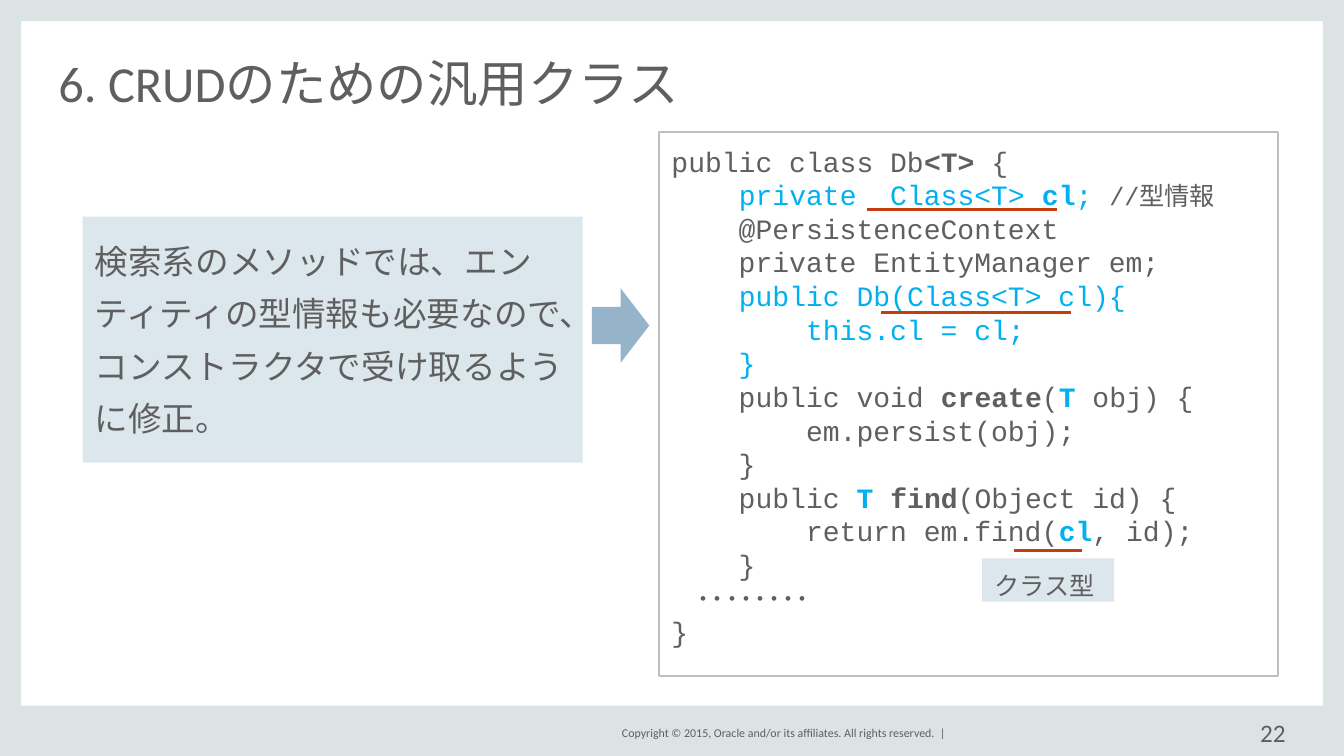
from lxml import etree
from pptx import Presentation
from pptx.dml.color import RGBColor
from pptx.enum.shapes import MSO_CONNECTOR, MSO_SHAPE
from pptx.enum.text import MSO_ANCHOR, PP_ALIGN
from pptx.oxml.ns import qn
from pptx.util import Inches, Pt

RECTANGLE, RIGHT_ARROW = MSO_SHAPE.RECTANGLE, MSO_SHAPE.RIGHT_ARROW
STRAIGHT = MSO_CONNECTOR.STRAIGHT
TOP, MIDDLE, BOTTOM = MSO_ANCHOR.TOP, MSO_ANCHOR.MIDDLE, MSO_ANCHOR.BOTTOM
LEFT, RIGHT = PP_ALIGN.LEFT, PP_ALIGN.RIGHT

THEME = {
    "text": "5F5F5F", "accent": "00B0F0", "frame": "DCE3E4", "panel": "DCE6ED",
    "arrow": "96B4C9", "border": "BFBFBF", "underline": "C23E0D",
    "body_font": "Calibri", "code_font": "Courier New",
    "title": 36, "message": 24, "code": 20, "small": 18, "footer": 8.5,
}

WIDTH, HEIGHT = 13.33, 7.5
SIDE, FOOTER_HEIGHT = 0.21, 0.5
FRAME = [
    (0, 0, SIDE, HEIGHT),
    (WIDTH - SIDE, 0, SIDE, HEIGHT),
    (0, HEIGHT - FOOTER_HEIGHT, WIDTH, FOOTER_HEIGHT),
    (0, 0, WIDTH, SIDE),
]
TITLE = "6. CRUDのための汎用クラス"
COPYRIGHT = "Copyright © 2015, Oracle and/or its affiliates. All rights reserved.  |"
PAGE_NUMBER = "22"
MESSAGE = "検索系のメソッドでは、エンティティの型情報も必要なので、コンストラクタで受け取るように修正。"
CLASS_TYPE = "クラス型"

BOLD = {"bold": True}
ACCENT = {"color": "accent"}
ACCENT_BOLD = {"color": "accent", "bold": True}
# Each code line is a string or a list of strings and (text, format) pairs.
CODE = [
    ["public class Db", ("<T>", BOLD), " {"],
    ["    ", ("private  Class<T> ", ACCENT), ("cl", ACCENT_BOLD), ("; ", ACCENT),
     ("//型情報", {"size": "small"})],
    "    @PersistenceContext",
    "    private EntityManager em;",
    ["    ", ("public Db(Class<T> cl){", ACCENT)],
    [("        this.cl = cl;", ACCENT)],
    [("    }", ACCENT)],
    ["    public void ", ("create", BOLD), "(", ("T ", ACCENT_BOLD), "obj) {"],
    "        em.persist(obj);",
    "    }",
    ["    public ", ("T ", ACCENT_BOLD), ("find", BOLD), "(Object id) {"],
    ["        return em.find(", ("cl", ACCENT_BOLD), ", id);"],
    "    }",
    "    ････････",
    "}",
]
UNDERLINES = [(8.6, 2.08, 1.88), (8.74, 3.1, 1.88), (10.06, 5.46, 0.67)]  # left, top, length


def rgb(name):
    return RGBColor.from_string(THEME[name])


def add_run(paragraph, text, size, font, color="text", bold=False):
    run = paragraph.add_run()
    run.text = text
    run.font.size = Pt(THEME[size])
    run.font.bold = bold
    run.font.color.rgb = rgb(color)
    run.font.name = THEME[font]
    east_asian = etree.SubElement(run.font._element, qn("a:ea"))
    east_asian.set("typeface", THEME["body_font"])


def write(shape, lines, size, font="body_font", inset=0.0, anchor=TOP, align=LEFT, spacing=None):
    frame = shape.text_frame
    frame.word_wrap = True
    frame.vertical_anchor = anchor
    frame.margin_left = frame.margin_right = Inches(inset)
    frame.margin_top = frame.margin_bottom = Inches(inset)
    for index, line in enumerate(lines):
        paragraph = frame.paragraphs[0] if index == 0 else frame.add_paragraph()
        paragraph.alignment = align
        paragraph.line_spacing = spacing
        for part in [line] if isinstance(line, str) else line:
            text, changes = (part, {}) if isinstance(part, str) else part
            add_run(paragraph, text, **{"size": size, "font": font, **changes})


def add_box(slide, box, fill=None, border=None, kind=RECTANGLE):
    shape = slide.shapes.add_shape(kind, *map(Inches, box))
    shape.shadow.inherit = False
    if fill:
        shape.fill.solid()
        shape.fill.fore_color.rgb = rgb(fill)
    else:
        shape.fill.background()
    if border:
        shape.line.color.rgb = rgb(border)
        shape.line.width = Pt(1.5)
    else:
        shape.line.fill.background()
    return shape


def add_text(slide, box, text, size, **options):
    write(slide.shapes.add_textbox(*map(Inches, box)), [text], size, **options)


def add_underline(slide, left, top, length):
    line = slide.shapes.add_connector(
        STRAIGHT, Inches(left), Inches(top), Inches(left + length), Inches(top))
    line.line.color.rgb = rgb("underline")
    line.line.width = Pt(2.25)
    etree.SubElement(line._element.spPr, qn("a:effectLst"))


def main():
    presentation = Presentation()
    presentation.slide_width, presentation.slide_height = Inches(WIDTH), Inches(HEIGHT)
    slide = presentation.slides.add_slide(presentation.slide_layouts[6])

    for bar in FRAME:
        add_box(slide, bar, fill="frame")
    add_text(slide, (5.88, 7.17, 3.5, 0.2), COPYRIGHT, "footer", anchor=MIDDLE, align=RIGHT)
    add_text(slide, (12.33, 7.17, 0.42, 0.2), PAGE_NUMBER, "small", anchor=MIDDLE, align=RIGHT)
    add_text(slide, (0.58, 0.41, 12.17, 0.7), TITLE, "title", anchor=BOTTOM, spacing=0.8)

    code_box = add_box(slide, (6.54, 1.31, 6.14, 5.4), border="border")
    write(code_box, CODE, "code", font="code_font", inset=0.12, spacing=Pt(24))
    message_box = add_box(slide, (0.82, 2.15, 4.96, 2.44), fill="panel")
    write(message_box, [MESSAGE], "message", font="code_font", inset=0.12, spacing=1.3)
    add_box(slide, (5.87, 2.86, 0.57, 0.74), fill="arrow", kind=RIGHT_ARROW)
    class_label = add_box(slide, (9.74, 5.54, 1.31, 0.43), fill="panel")
    write(class_label, [CLASS_TYPE], "small", inset=0.12)
    for underline in UNDERLINES:
        add_underline(slide, *underline)

    presentation.save("out.pptx")


if __name__ == "__main__":
    main()
